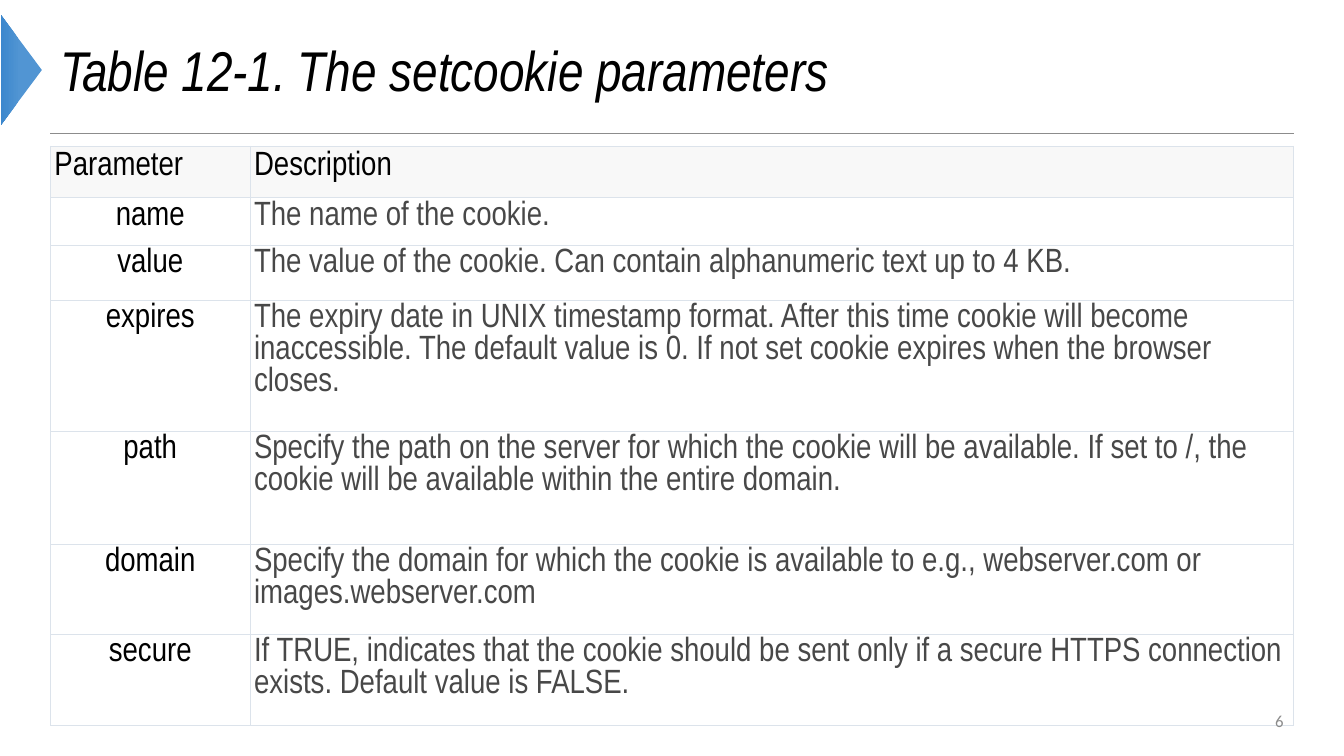
import copy
import lxml.etree
import pptx
import pptx.util
import pptx.dml.color
import pptx.enum.shapes
import pptx.enum.text
import pptx.oxml.ns

Inches, Pt = pptx.util.Inches, pptx.util.Pt
ALIGN = pptx.enum.text.PP_ALIGN
qn = pptx.oxml.ns.qn


def color(value):
    return pptx.dml.color.RGBColor.from_string(value)


def write(frame, text, size, font, ink, align=ALIGN.LEFT):
    frame.word_wrap = True
    paragraph = frame.paragraphs[0]
    paragraph.text = text
    paragraph.alignment = align
    paragraph.font.size = Pt(size)
    paragraph.font.name = font
    paragraph.font.color.rgb = color(ink)
    return paragraph


deck = pptx.Presentation()
deck.slide_width, deck.slide_height = Inches(13.33), Inches(7.5)
slide = deck.slides.add_slide(deck.slide_layouts[6])
margin = Inches(0.5)
content_width = deck.slide_width - 2 * margin

marker = slide.shapes.add_shape(
    pptx.enum.shapes.MSO_SHAPE.ISOSCELES_TRIANGLE,
    Inches(-0.34), Inches(0.49), Inches(1.1), Inches(0.41))
marker.rotation = 90
marker.shadow.inherit = False
marker.line.fill.background()
marker.fill.gradient()
marker.fill.gradient_angle = 270
stop_list = marker._element.spPr.find(".//" + qn("a:gsLst"))
stop_list.insert(1, copy.deepcopy(stop_list[0]))
for stop, place, shade in zip(marker.fill.gradient_stops, (0, 0.58, 1),
                              ("5195D3", "4E93D2", "3B87CD")):
    stop.position = place
    stop.color.rgb = color(shade)

rule = slide.shapes.add_connector(
    pptx.enum.shapes.MSO_CONNECTOR.STRAIGHT,
    margin, Inches(1.32), margin + content_width, Inches(1.32))
rule.line.color.rgb = color("8C8C8C")
rule.line.width = Pt(0.75)
lxml.etree.SubElement(rule._element.spPr, qn("a:effectLst"))

title = slide.shapes.add_textbox(margin, Inches(0.14), content_width, Inches(1.18)).text_frame
title.vertical_anchor = pptx.enum.text.MSO_ANCHOR.MIDDLE
heading = write(title, "Table 12-1. The setcookie parameters", 40, "Arial Narrow", "000000")
heading.font.italic = True
heading.line_spacing = 0.9

parameters = [
    (0.51, "Parameter", "Description"),
    (0.47, "name", "The name of the cookie."),
    (0.55, "value", "The value of the cookie. Can contain alphanumeric text up to 4 KB."),
    (1.3, "expires", "The expiry date in UNIX timestamp format. After this time cookie will become "
     "inaccessible. The default value is 0. If not set cookie expires when the browser closes."),
    (1.12, "path", "Specify the path on the server for which the cookie will be available. "
     "If set to /, the cookie will be available within the entire domain."),
    (0.89, "domain", "Specify the domain for which the cookie is available to e.g., "
     "webserver.com or images.webserver.com"),
    (0.91, "secure", "If TRUE, indicates that the cookie should be sent only if a secure HTTPS "
     "connection exists. Default value is FALSE."),
]
table = slide.shapes.add_table(len(parameters), 2, margin, Inches(1.45),
                               content_width, Inches(5.74)).table
table.first_row = table.horz_banding = False
table.columns[0].width = Inches(1.98)
table.columns[1].width = content_width - Inches(1.98)
for row, (height, *texts) in enumerate(parameters):
    table.rows[row].height = Inches(height)
    for column, text in enumerate(texts):
        cell = table.cell(row, column)
        header = row == 0
        cell.margin_left = cell.margin_right = Inches(0.04)
        cell.margin_top = cell.margin_bottom = Inches(0.05 if header else 0.03)
        for side in ("a:lnL", "a:lnR", "a:lnT", "a:lnB"):
            border = lxml.etree.SubElement(cell._tc.get_or_add_tcPr(), qn(side), w=str(Pt(0.6)))
            paint = lxml.etree.SubElement(border, qn("a:solidFill"))
            lxml.etree.SubElement(paint, qn("a:srgbClr"), val="DCE3EB")
        cell.fill.solid()
        cell.fill.fore_color.rgb = color("F8F8F8" if header else "FFFFFF")
        write(cell.text_frame, text, 24, "Arial Narrow",
              "000000" if header or column == 0 else "484848",
              ALIGN.LEFT if header or column else ALIGN.CENTER)

page_number = slide.shapes.add_textbox(Inches(9.83), Inches(6.95), Inches(3), Inches(0.4)).text_frame
page_number.vertical_anchor = pptx.enum.text.MSO_ANCHOR.MIDDLE
write(page_number, "6", 12, "Calibri", "8C8C8C", ALIGN.RIGHT)

deck.save("out.pptx")
